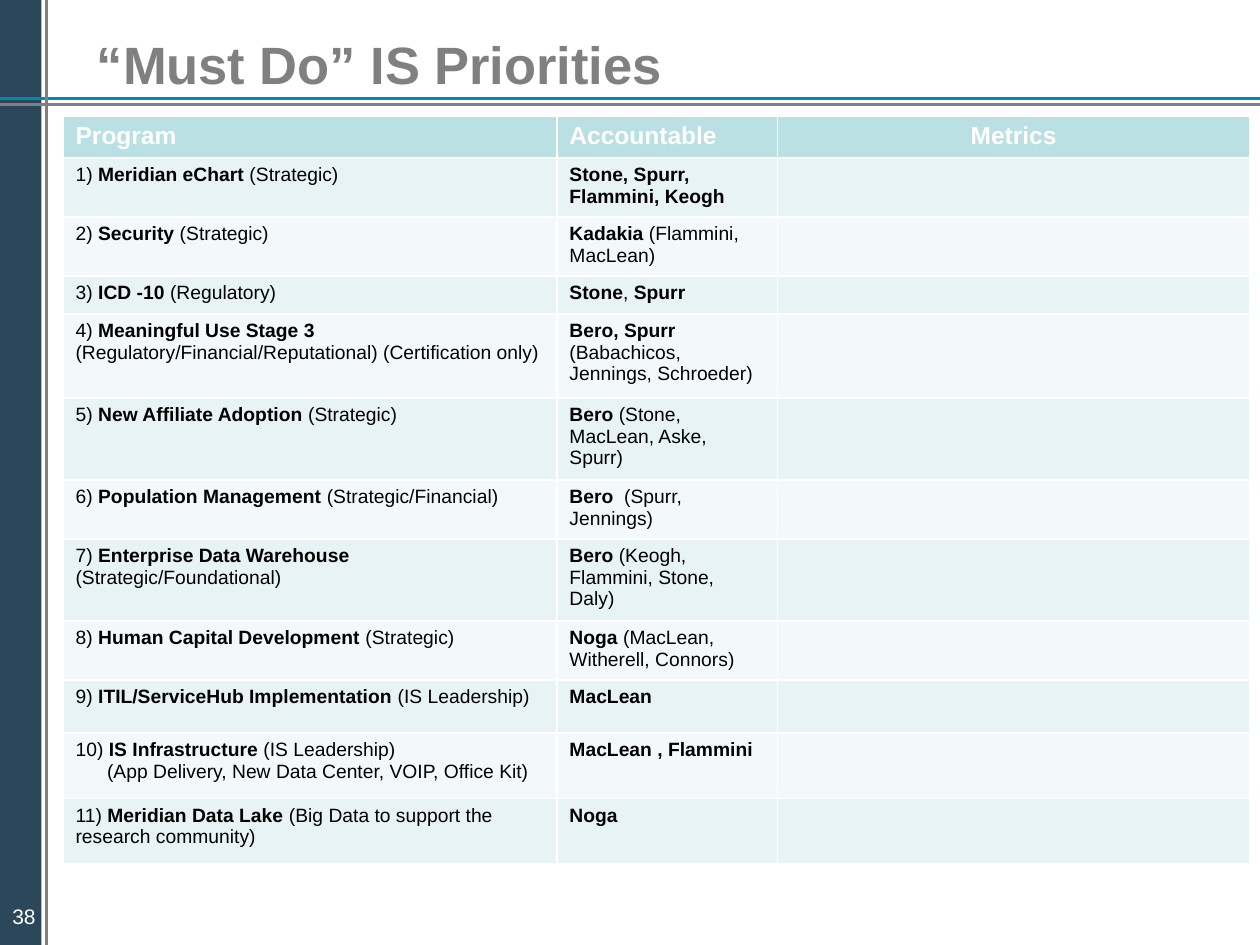
from dataclasses import dataclass

from lxml.etree import SubElement
from pptx import Presentation
from pptx.dml.color import RGBColor
from pptx.enum.shapes import MSO_CONNECTOR, MSO_SHAPE
from pptx.enum.text import MSO_ANCHOR, PP_ALIGN
from pptx.oxml.ns import qn
from pptx.util import Inches, Pt


@dataclass(frozen=True)
class Theme:
    font: str = "Arial"
    navy: RGBColor = RGBColor(0x2C, 0x46, 0x5A)
    gray: RGBColor = RGBColor(0x80, 0x80, 0x80)
    blue: RGBColor = RGBColor(0x00, 0x8A, 0xB0)
    white: RGBColor = RGBColor(0xFF, 0xFF, 0xFF)
    black: RGBColor = RGBColor(0, 0, 0)
    header_fill: RGBColor = RGBColor(0xBB, 0xE0, 0xE3)
    odd_fill: RGBColor = RGBColor(0xE7, 0xF3, 0xF4)
    even_fill: RGBColor = RGBColor(0xF3, 0xF9, 0xFA)
    title_size: Pt = Pt(30)
    header_size: Pt = Pt(14)
    number_size: Pt = Pt(12)
    body_size: Pt = Pt(11)


THEME = Theme()


def write_marked(paragraph, text, size, color):
    """Write text into the paragraph; parts between asterisks are bold."""
    for index, part in enumerate(text.split("*")):
        if part:
            run = paragraph.add_run()
            run.text = part
            run.font.name = THEME.font
            run.font.size = size
            run.font.color.rgb = color
            run.font.bold = index % 2 == 1


def add_label(slide, left, top, width, height, text, size, color):
    box = slide.shapes.add_textbox(Inches(left), Inches(top), Inches(width), Inches(height))
    box.text_frame.word_wrap = True
    write_marked(box.text_frame.paragraphs[0], text, size, color)
    return box


presentation = Presentation()
presentation.slide_width = Inches(10)
presentation.slide_height = Inches(7.5)
slide = presentation.slides.add_slide(presentation.slide_layouts[6])

# Side band and rules
band = slide.shapes.add_shape(MSO_SHAPE.RECTANGLE, 0, 0, Inches(0.33), Inches(7.5))
band.shadow.inherit = False
band.fill.solid()
band.fill.fore_color.rgb = THEME.navy
band.line.fill.background()

rules = [
    (0, 0.83, 10, 0.83, THEME.gray),
    (0, 0.78, 10, 0.78, THEME.blue),
    (0.37, 0, 0.37, 7.5, THEME.gray),
]
for *ends, color in rules:
    rule = slide.shapes.add_connector(MSO_CONNECTOR.STRAIGHT, *map(Inches, ends))
    rule.line.color.rgb = color
    rule.line.width = Pt(1.5)
    SubElement(rule._element.spPr, qn("a:effectLst"))

title = add_label(slide, 0.67, 0.17, 8.83, 0.67, "*“Must Do” IS Priorities*",
                  THEME.title_size, THEME.gray)
title.text_frame.vertical_anchor = MSO_ANCHOR.MIDDLE

# Priorities table: program, accountable, row height
headers = ["Program", "Accountable", "Metrics"]
column_widths = [3.92, 1.75, 3.75]
header_height = 0.33
priorities = [
    ("*Meridian eChart* (Strategic)", "*Stone, Spurr, Flammini, Keogh*", 0.47),
    ("*Security* (Strategic)", "*Kadakia* (Flammini, MacLean)", 0.46),
    ("*ICD -10* (Regulatory)", "*Stone*, *Spurr*", 0.3),
    ("*Meaningful Use Stage 3 *(Regulatory/Financial/Reputational) (Certification only)",
     "*Bero, Spurr *(Babachicos, Jennings, Schroeder)", 0.67),
    ("*New Affiliate Adoption* (Strategic)", "*Bero* (Stone, MacLean, Aske, Spurr)", 0.64),
    ("*Population Management* (Strategic/Financial)", "*Bero * (Spurr, Jennings)", 0.46),
    ("*Enterprise Data Warehouse *(Strategic/Foundational)",
     "*Bero* (Keogh, Flammini, Stone, Daly)", 0.52),
    ("*Human Capital Development* (Strategic)", "*Noga* (MacLean, Witherell, Connors)", 0.46),
    ("*ITIL/ServiceHub Implementation* (IS Leadership)", "*MacLean*", 0.42),
    ("*IS Infrastructure* (IS Leadership)\n(App Delivery, New Data Center, VOIP, Office Kit)",
     "*MacLean , Flammini*", 0.52),
    ("*Meridian Data Lake* (Big Data to support the research community)", "*Noga*", 0.52),
]
row_heights = [header_height] + [height for *_, height in priorities]
table = slide.shapes.add_table(
    len(row_heights), len(headers), Inches(0.5), Inches(0.92),
    Inches(sum(column_widths)), Inches(sum(row_heights))).table
for column, width in zip(table.columns, column_widths):
    column.width = Inches(width)
for row, height in zip(table.rows, row_heights):
    row.height = Inches(height)

for column_index, header in enumerate(headers):
    cell = table.cell(0, column_index)
    cell.fill.solid()
    cell.fill.fore_color.rgb = THEME.header_fill
    write_marked(cell.text_frame.paragraphs[0], f"*{header}*", THEME.header_size, THEME.white)
table.cell(0, 2).text_frame.paragraphs[0].alignment = PP_ALIGN.CENTER

for number, (program, accountable, _) in enumerate(priorities, start=1):
    for column_index, text in enumerate([f"{number}) {program}", accountable, ""]):
        cell = table.cell(number, column_index)
        cell.fill.solid()
        cell.fill.fore_color.rgb = THEME.odd_fill if number % 2 else THEME.even_fill
        first_line, *detail_lines = text.split("\n")
        paragraph = cell.text_frame.paragraphs[0]
        write_marked(paragraph, first_line, THEME.body_size, THEME.black)
        for line in detail_lines:
            detail = cell.text_frame.add_paragraph()
            detail._p.get_or_add_pPr().set("marL", str(Inches(0.25)))
            write_marked(detail, line, THEME.body_size, THEME.black)
        if not text:
            # Keeps an empty cell from stretching its row
            end_properties = SubElement(paragraph._p, qn("a:endParaRPr"))
            end_properties.set("sz", str(int(THEME.body_size.pt * 100)))

add_label(slide, 0, 7.12, 0.5, 0.4, "38", THEME.number_size, THEME.white)

presentation.save("out.pptx")
